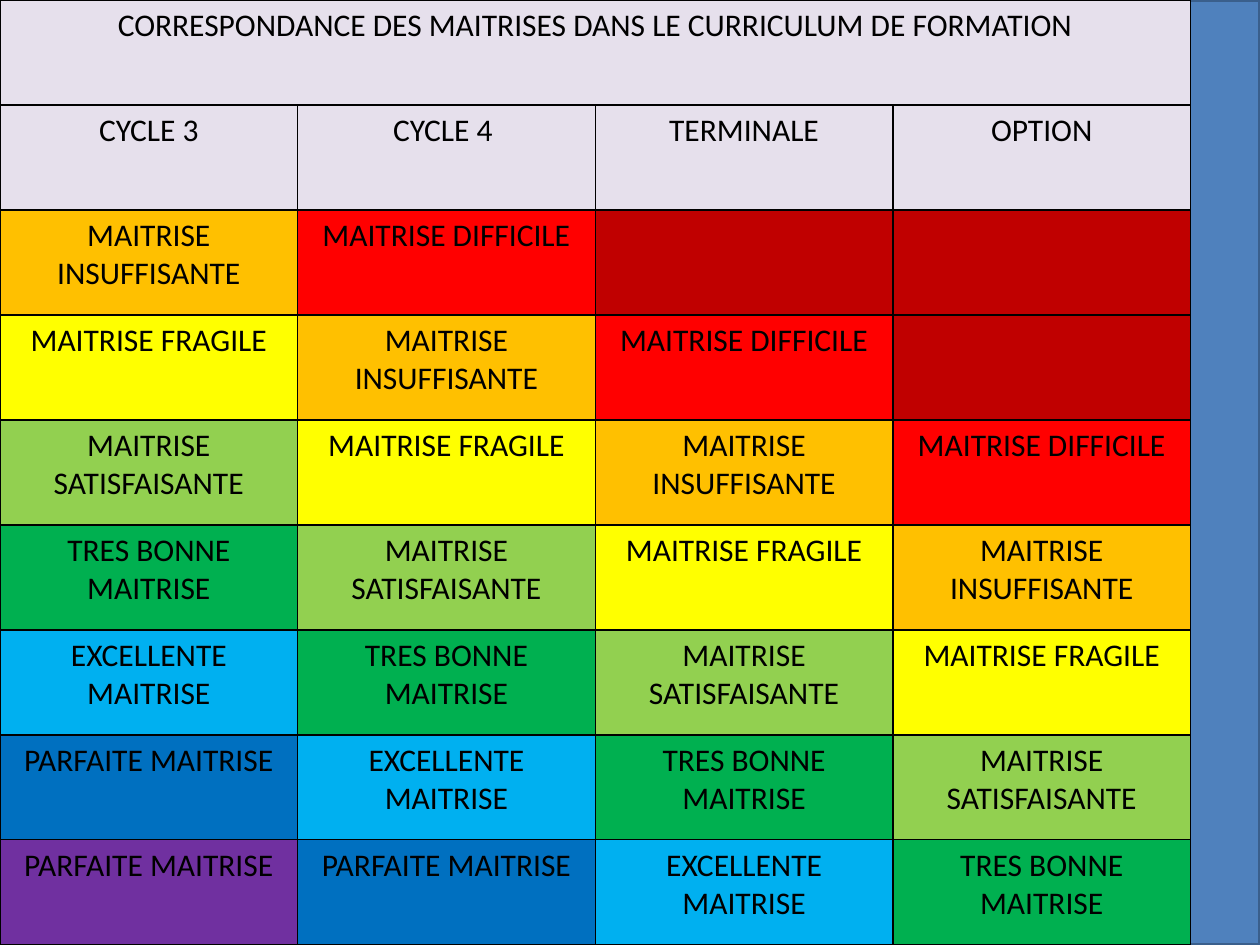
import pptx
import pptx.dml.color
import pptx.enum.shapes
import pptx.enum.text
import pptx.oxml
import pptx.oxml.ns
import pptx.util

WIDTH = pptx.util.Inches(10)
HEIGHT = pptx.util.Inches(7.5)
TABLE_SHARE = 0.945
HEADING = "CORRESPONDANCE DES MAITRISES DANS LE CURRICULUM DE FORMATION"
STAGES = ["CYCLE 3", "CYCLE 4 ", "TERMINALE", "OPTION"]
HEADER_FILL = "E6E0EC"
# From the lowest level of mastery to the highest
LEVELS = [
    ("", "C00000"),
    ("MAITRISE DIFFICILE", "FF0000"),
    ("MAITRISE INSUFFISANTE", "FFC000"),
    ("MAITRISE FRAGILE", "FFFF00"),
    ("MAITRISE SATISFAISANTE", "92D050"),
    ("TRES BONNE MAITRISE", "00B050"),
    ("EXCELLENTE MAITRISE", "00B0F0"),
    ("PARFAITE MAITRISE", "0070C0"),
    ("PARFAITE MAITRISE", "7030A0"),
]
FIRST_LEVEL = 2
HEADER_ROWS = 2
LEVEL_ROWS = len(LEVELS) - FIRST_LEVEL


def paint(fill, color):
    fill.solid()
    fill.fore_color.rgb = pptx.dml.color.RGBColor.from_string(color)


def add_background(page):
    panel = page.shapes.add_shape(
        pptx.enum.shapes.MSO_SHAPE.RECTANGLE, 0, 0, WIDTH, HEIGHT)
    panel.shadow.inherit = False
    paint(panel.fill, "4F81BD")
    paint(panel.line.fill, "3A5F8C")
    panel.line.width = pptx.util.Pt(2)


def set_borders(cell):
    """Draw a black 1 pt line on each side; lines must come before the fill."""
    properties = cell._tc.get_or_add_tcPr()
    for place, side in enumerate(("lnL", "lnR", "lnT", "lnB")):
        properties.insert(place, pptx.oxml.parse_xml(
            f'<a:{side} {pptx.oxml.ns.nsdecls("a")} w="{pptx.util.Pt(1)}">'
            '<a:solidFill><a:srgbClr val="000000"/></a:solidFill>'
            f'</a:{side}>'))


def fill_cell(cell, text, color):
    paint(cell.fill, color)
    set_borders(cell)
    if not text:
        return
    para = cell.text_frame.paragraphs[0]
    para.alignment = pptx.enum.text.PP_ALIGN.CENTER
    span = para.add_run()
    span.text = text
    span.font.name = "Calibri"
    span.font.size = pptx.util.Pt(18)
    span.font.bold = False
    paint(span.font.fill, "000000")


def add_mastery_table(page):
    """Each stage starts one level lower than the stage to its left."""
    table = page.shapes.add_table(
        HEADER_ROWS + LEVEL_ROWS, len(STAGES),
        0, 0, int(WIDTH * TABLE_SHARE), HEIGHT).table
    table.first_row = False
    table.horz_banding = False
    for column, stage in enumerate(STAGES):
        fill_cell(table.cell(0, column), "" if column else HEADING, HEADER_FILL)
        fill_cell(table.cell(1, column), stage, HEADER_FILL)
        for row in range(LEVEL_ROWS):
            text, color = LEVELS[max(0, FIRST_LEVEL + row - column)]
            fill_cell(table.cell(HEADER_ROWS + row, column), text, color)
    table.cell(0, 0).merge(table.cell(0, len(STAGES) - 1))


def main():
    deck = pptx.Presentation()
    deck.slide_width, deck.slide_height = WIDTH, HEIGHT
    page = deck.slides.add_slide(deck.slide_layouts[6])
    add_background(page)
    add_mastery_table(page)
    deck.save("out.pptx")


if __name__ == "__main__":
    main()
